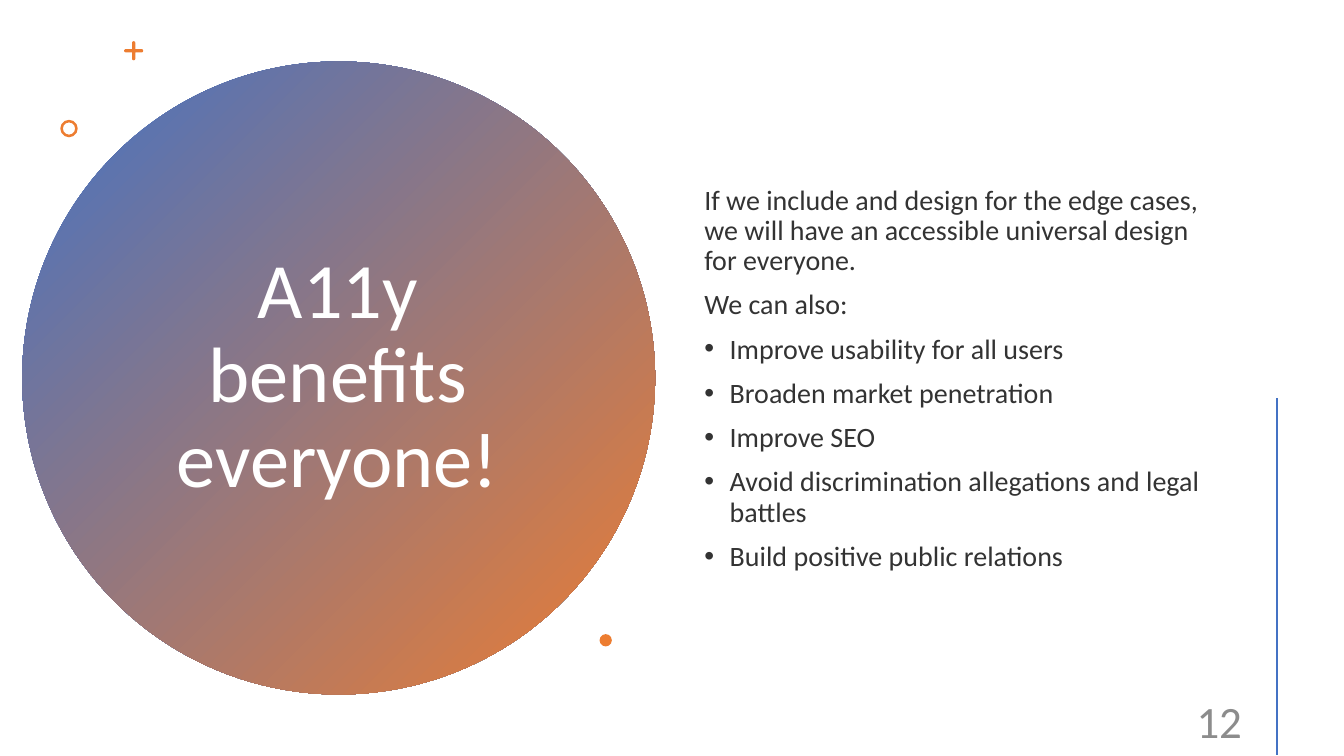
from dataclasses import dataclass
from math import cos, radians, sin

from lxml import etree
from pptx import Presentation
from pptx.dml.color import RGBColor
from pptx.enum import shapes, text
from pptx.oxml import ns
from pptx.util import Cm, Pt

BLUE = RGBColor(0x44, 0x72, 0xC4)
ORANGE = RGBColor(0xED, 0x7D, 0x31)
WHITE = RGBColor(0xFF, 0xFF, 0xFF)
INK = RGBColor(0x33, 0x33, 0x33)
GREY = RGBColor(0x8C, 0x8C, 0x8C)
FONT = "Calibri"
BULLET_INDENT = Cm(0.64)


@dataclass
class Box:
    left: float
    top: float
    width: float
    height: float

    def lengths(self) -> tuple:
        return Cm(self.left), Cm(self.top), Cm(self.width), Cm(self.height)


@dataclass
class Round:
    preset: shapes.MSO_SHAPE
    left: float
    top: float
    size: float


@dataclass
class Line:
    words: str
    bullet: bool = False


CIRCLE = Round(shapes.MSO_SHAPE.OVAL, 0.56, 1.55, 15.95)
RING = Round(shapes.MSO_SHAPE.DONUT, 1.52, 3.02, 0.44)
DOT = Round(shapes.MSO_SHAPE.OVAL, 15.11, 15.98, 0.31)

TITLE_BOX = Box(3.45, 3.58, 10.13, 11.86)
BENEFITS_BOX = Box(17.5, 1.45, 13.26, 16.21)
NUMBER_BOX = Box(23.93, 17.65, 7.62, 1.02)

BENEFITS = [
    Line("If we include and design for the edge cases, we will have an "
         "accessible universal design for everyone."),
    Line("We can also:"),
    Line("Improve usability for all users", bullet=True),
    Line("Broaden market penetration", bullet=True),
    Line("Improve SEO", bullet=True),
    Line("Avoid discrimination allegations and legal battles", bullet=True),
    Line("Build positive public relations", bullet=True),
]


def add_bullet(paragraph) -> None:
    properties = paragraph._p.get_or_add_pPr()
    properties.set("marL", str(BULLET_INDENT))
    properties.set("indent", str(-BULLET_INDENT))
    etree.SubElement(properties, ns.qn("a:buFont")).set("typeface", "Arial")
    etree.SubElement(properties, ns.qn("a:buChar")).set("char", "•")


def write(shape, lines: list[Line], *, size: float, color: RGBColor,
          align=text.PP_ALIGN.LEFT, spacing: float = 1.0, before: float = 0) -> None:
    frame = shape.text_frame
    frame.word_wrap = True
    frame.auto_size = text.MSO_AUTO_SIZE.NONE
    frame.vertical_anchor = text.MSO_ANCHOR.MIDDLE
    for index, line in enumerate(lines):
        paragraph = frame.add_paragraph() if index else frame.paragraphs[0]
        paragraph.alignment = align
        paragraph.line_spacing = spacing
        paragraph.space_before = Pt(before)
        if line.bullet:
            add_bullet(paragraph)
        run = paragraph.add_run()
        run.text = line.words
        run.font.name = FONT
        run.font.size = Pt(size)
        run.font.color.rgb = color


def paint(shape, color: RGBColor) -> None:
    shape.fill.solid()
    shape.fill.fore_color.rgb = color
    shape.line.fill.background()
    shape.shadow.inherit = False


def add_round(slide, item: Round, color: RGBColor):
    shape = slide.shapes.add_shape(
        item.preset, Cm(item.left), Cm(item.top), Cm(item.size), Cm(item.size))
    paint(shape, color)
    return shape


def add_plus(slide, x: float, y: float, reach: float, half: float) -> None:
    """Draw a plus with round tips: one arm, turned four times."""
    arm = [(reach - half + half * cos(radians(t)), half * sin(radians(t)))
           for t in range(-90, 91, 15)] + [(half, half)]
    points = []
    for turn in map(radians, range(0, 360, 90)):
        points += [(Cm(x + u * cos(turn) - v * sin(turn)),
                    Cm(y + u * sin(turn) + v * cos(turn))) for u, v in arm]
    builder = slide.shapes.build_freeform(*points[0])
    builder.add_line_segments(points[1:], close=True)
    paint(builder.convert_to_shape(), ORANGE)


def main() -> None:
    deck = Presentation()
    deck.slide_width, deck.slide_height = Cm(33.87), Cm(19.05)
    slide = deck.slides.add_slide(deck.slide_layouts[5])

    # Gradient circle, behind the title
    circle = add_round(slide, CIRCLE, BLUE)
    circle.fill.gradient()
    circle.fill.gradient_angle = 315
    for stop, color, position in zip(circle.fill.gradient_stops, (BLUE, ORANGE), (0, 1)):
        stop.color.rgb = color
        stop.position = position

    title = slide.shapes.title
    title.left, title.top, title.width, title.height = TITLE_BOX.lengths()
    write(title, [Line("A11y benefits everyone!")], size=56, color=WHITE,
          align=text.PP_ALIGN.CENTER, spacing=0.9)
    circle.element.addnext(title.element)

    # Small orange ornaments
    add_plus(slide, x=3.37, y=1.28, reach=0.24, half=0.04)
    ring = add_round(slide, RING, ORANGE)
    ring.adjustments[0] = 0.15
    add_round(slide, DOT, ORANGE)

    # Benefits
    benefits = slide.shapes.add_textbox(*BENEFITS_BOX.lengths())
    write(benefits, BENEFITS, size=20, color=INK, spacing=0.9, before=10)

    # Side rule and slide number
    rule = slide.shapes.add_connector(
        shapes.MSO_CONNECTOR.STRAIGHT, Cm(32.18), Cm(10.03), Cm(32.18), Cm(19.02))
    rule.line.color.rgb = BLUE
    rule.line.width = Pt(2)
    etree.SubElement(rule.element.spPr, ns.qn("a:effectLst"))

    number = slide.shapes.add_textbox(*NUMBER_BOX.lengths())
    write(number, [Line("12")], size=32, color=GREY, align=text.PP_ALIGN.RIGHT)

    deck.save("out.pptx")


if __name__ == "__main__":
    main()
